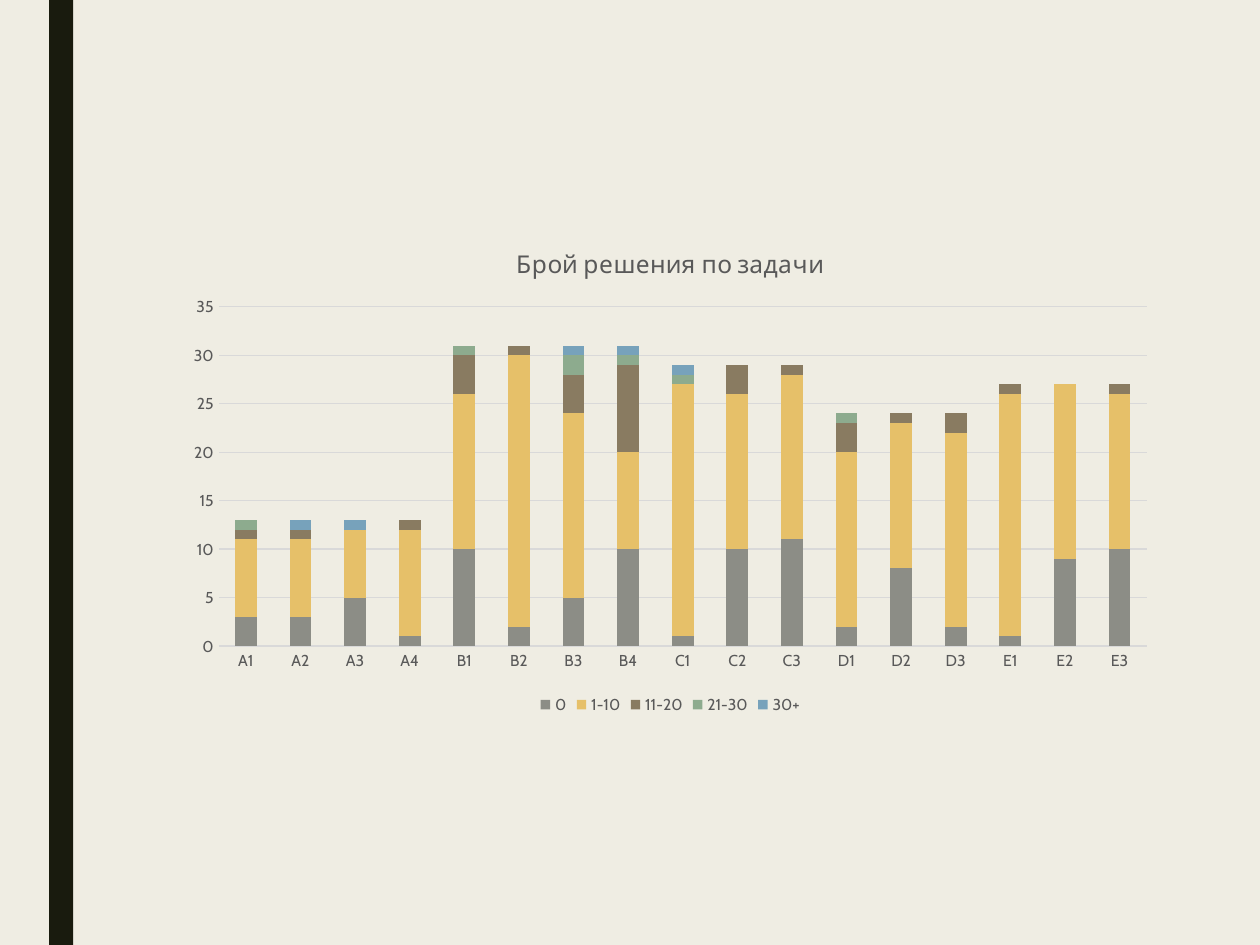
from typing import NamedTuple

from pptx import Presentation
from pptx.chart.data import CategoryChartData
from pptx.dml.color import RGBColor
from pptx.enum.chart import XL_CHART_TYPE, XL_LEGEND_POSITION, XL_TICK_MARK
from pptx.enum.shapes import MSO_SHAPE
from pptx.util import Inches, Pt

STACKED = XL_CHART_TYPE.COLUMN_STACKED
BOTTOM = XL_LEGEND_POSITION.BOTTOM
NO_TICK = XL_TICK_MARK.NONE
RECTANGLE = MSO_SHAPE.RECTANGLE

SLIDE_WIDTH, SLIDE_HEIGHT = Inches(10), Inches(7.5)
FONT = "Cabin"
COLORS = {
    "background": "EFEDE3",
    "sidebar": "191B0E",
    "text": "595959",
    "line": "D9D9D9",
    "gray": "8C8D86",
    "yellow": "E6C069",
    "brown": "897B61",
    "green": "8DAB8E",
    "blue": "77A2BB",
}
TITLE = "Брой решения по задачи"
TASKS_PER_GROUP = {"A": 4, "B": 4, "C": 3, "D": 3, "E": 3}


class ScoreBand(NamedTuple):
    name: str
    color: str
    counts: tuple[int, ...]


SCORE_BANDS = (
    ScoreBand("0", "gray", (3, 3, 5, 1, 10, 2, 5, 10, 1, 10, 11, 2, 8, 2, 1, 9, 10)),
    ScoreBand("1-10", "yellow", (8, 8, 7, 11, 16, 28, 19, 10, 26, 16, 17, 18, 15, 20, 25, 18, 16)),
    ScoreBand("11-20", "brown", (1, 1, 0, 1, 4, 1, 4, 9, 0, 3, 1, 3, 1, 2, 1, 0, 1)),
    ScoreBand("21-30", "green", (1, 0, 0, 0, 1, 0, 2, 1, 1, 0, 0, 1, 0, 0, 0, 0, 0)),
    ScoreBand("30+", "blue", (0, 1, 1, 0, 0, 0, 1, 1, 1, 0, 0, 0, 0, 0, 0, 0, 0)),
)


def rgb(name: str) -> RGBColor:
    return RGBColor.from_string(COLORS[name])


def paint(fill, color: str) -> None:
    fill.solid()
    fill.fore_color.rgb = rgb(color)


def style_font(font, size: float = 9) -> None:
    font.name = FONT
    font.size = Pt(size)
    font.bold = False
    font.color.rgb = rgb("text")


def style_line(line) -> None:
    line.color.rgb = rgb("line")
    line.width = Pt(0.75)


def add_sidebar(slide) -> None:
    sidebar = slide.shapes.add_shape(RECTANGLE, Inches(0.39), 0, Inches(0.19), SLIDE_HEIGHT)
    sidebar.shadow.inherit = False
    paint(sidebar.fill, "sidebar")
    sidebar.line.fill.background()


def add_solutions_chart(slide) -> None:
    data = CategoryChartData()
    data.categories = [
        f"{group}{number}"
        for group, count in TASKS_PER_GROUP.items()
        for number in range(1, count + 1)
    ]
    for band in SCORE_BANDS:
        data.add_series(band.name, band.counts)
    chart = slide.shapes.add_chart(
        STACKED, Inches(1.38), Inches(1.79), Inches(7.88), Inches(3.92), data
    ).chart
    style_font(chart.font)

    chart.has_title = True
    title_frame = chart.chart_title.text_frame
    title_frame.text = TITLE
    style_font(title_frame.paragraphs[0].runs[0].font, size=14)
    chart.chart_title.include_in_layout = False

    chart.has_legend = True
    chart.legend.position = BOTTOM
    chart.legend.include_in_layout = False
    style_font(chart.legend.font)

    for axis in (chart.category_axis, chart.value_axis):
        axis.major_tick_mark = axis.minor_tick_mark = NO_TICK
        style_font(axis.tick_labels.font)
    style_line(chart.category_axis.format.line)
    value_axis = chart.value_axis
    value_axis.minimum_scale, value_axis.maximum_scale, value_axis.major_unit = 0, 35, 5
    value_axis.format.line.fill.background()
    value_axis.has_major_gridlines = True
    style_line(value_axis.major_gridlines.format.line)

    plot = chart.plots[0]
    plot.gap_width, plot.overlap = 150, 100
    plot.vary_by_categories = False
    for series, band in zip(plot.series, SCORE_BANDS):
        paint(series.format.fill, band.color)
        series.invert_if_negative = False


def main() -> None:
    presentation = Presentation()
    presentation.slide_width, presentation.slide_height = SLIDE_WIDTH, SLIDE_HEIGHT
    blank_layout = presentation.slide_layouts[6]
    slide = presentation.slides.add_slide(blank_layout)
    paint(slide.background.fill, "background")
    add_sidebar(slide)
    add_solutions_chart(slide)
    presentation.save("out.pptx")


if __name__ == "__main__":
    main()
